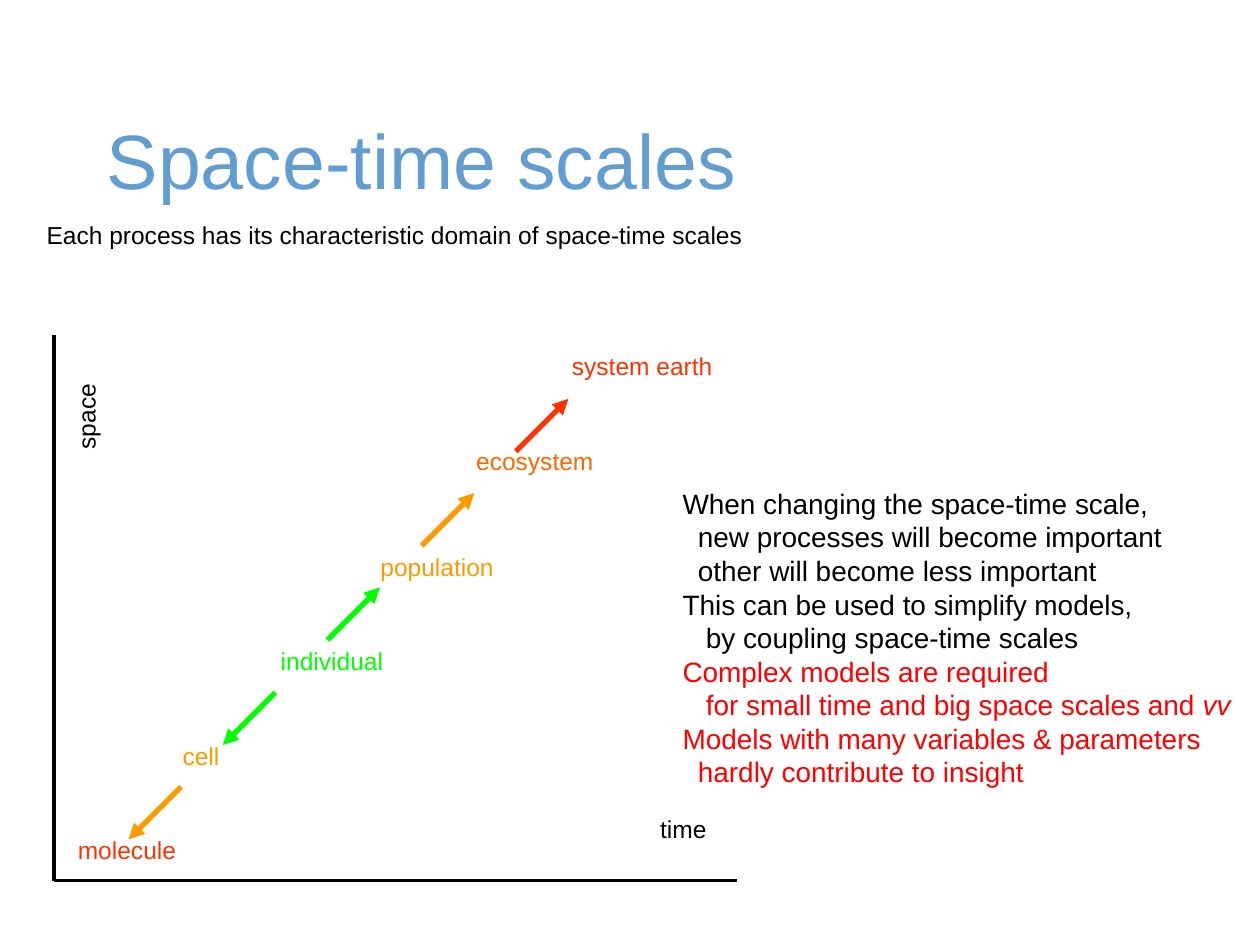
from lxml.etree import SubElement
from pptx import Presentation
from pptx.dml.color import RGBColor
from pptx.enum.shapes import MSO_CONNECTOR as Connector
from pptx.enum.text import MSO_ANCHOR as Anchor, PP_ALIGN as Align
from pptx.oxml.ns import qn
from pptx.util import Cm, Pt

FONT = "Arial"
COLORS = {
    "title": "629DD1",
    "black": "000000",
    "red": "FF0000",
    "vermilion": "FF3300",
    "dark orange": "FF6600",
    "orange": "FF9900",
    "green": "00FF00",
}

# Organisation levels: text, left, top, width (cm), colour
LEVELS = [
    ("molecule", 1.32, 16.71, 3.6, "vermilion"),
    ("cell", 3.43, 14.81, 1.75, "orange"),
    ("individual", 5.41, 12.9, 3.95, "green"),
    ("population", 7.42, 11, 4.1, "orange"),
    ("ecosystem", 9.35, 8.86, 4.05, "dark orange"),
    ("system earth", 11.28, 6.96, 4.75, "vermilion"),
]

# Arrow runs: foot of the first arrow (cm), pointing up, colours going up
ARROW_RUNS = [
    (2.59, 16.92, False, ["orange", "green"]),
    (6.6, 12.9, True, ["green", "orange", "vermilion"]),
]
ARROW_STEP = 1.9
ARROW_SIZE = 1.06

# Notes: indent (cm), colour, runs as (text, italic)
NOTES = [
    (0, "black", [("When changing the space-time scale,", False)]),
    (0.31, "black", [("new processes will become important", False)]),
    (0.31, "black", [("other will become less important", False)]),
    (0, "black", [("This can be used to simplify models,", False)]),
    (0.47, "black", [("by coupling space-time scales", False)]),
    (0, "red", [("Complex models are required", False)]),
    (0.47, "red", [("for small time and big space scales and ", False), ("vv", True)]),
    (0, "red", [("Models with many variables & parameters", False)]),
    (0.31, "red", [("hardly contribute to insight", False)]),
]


def rgb(name):
    return RGBColor.from_string(COLORS[name])


def add_run(paragraph, text, size, color, italic=False):
    run = paragraph.add_run()
    run.text = text
    run.font.name = FONT
    run.font.size = Pt(size)
    run.font.italic = italic
    run.font.color.rgb = rgb(color)


def add_text_box(shapes, left, top, width, height):
    box = shapes.add_textbox(Cm(left), Cm(top), Cm(width), Cm(height))
    box.text_frame.word_wrap = True
    return box


def add_label(shapes, text, left, top, width, color="black"):
    box = add_text_box(shapes, left, top, width, 1.27)
    add_run(box.text_frame.paragraphs[0], text, 14, color)
    return box


def add_line(shapes, start, end, color, width, arrow=False):
    points = [Cm(value) for value in (*start, *end)]
    line = shapes.add_connector(Connector.STRAIGHT, *points)
    line.line.color.rgb = rgb(color)
    line.line.width = Pt(width)
    properties = line._element.spPr
    if arrow:
        SubElement(properties.find(qn("a:ln")), qn("a:tailEnd"), type="triangle")
    SubElement(properties, qn("a:effectLst"))


def add_title(slide, text):
    title = slide.shapes.title
    title.left, title.top = Cm(1.9), Cm(1.73)
    title.width, title.height = Cm(21.59), Cm(3.18)
    title.text_frame.vertical_anchor = Anchor.MIDDLE
    paragraph = title.text_frame.paragraphs[0]
    paragraph.alignment = Align.LEFT
    paragraph.line_spacing = 0.9
    add_run(paragraph, text, 44, "title")


def add_diagram(slide):
    shapes = slide.shapes.add_group_shape().shapes

    # Axes
    origin = (1.09, 17.75)
    add_line(shapes, (1.09, 6.76), origin, "black", 2.25)
    add_line(shapes, origin, (14.86, 17.75), "black", 2.25)
    add_label(shapes, "time", 13.06, 16.28, 2.1)
    add_label(shapes, "space", 0.56, 7.29, 2.77).rotation = 270

    # Levels
    for level in LEVELS:
        add_label(shapes, *level)

    # Arrows between levels
    for left, bottom, upward, colors in ARROW_RUNS:
        for index, color in enumerate(colors):
            x, y = left + index * ARROW_STEP, bottom - index * ARROW_STEP
            ends = [(x, y), (x + ARROW_SIZE, y - ARROW_SIZE)]
            start, end = ends if upward else reversed(ends)
            add_line(shapes, start, end, color, 3, arrow=True)


def add_notes(slide):
    frame = add_text_box(slide.shapes, 13.51, 9.68, 11.8, 6.38).text_frame
    for index, (indent, color, runs) in enumerate(NOTES):
        paragraph = frame.add_paragraph() if index else frame.paragraphs[0]
        paragraph._p.get_or_add_pPr().set("marL", str(Cm(indent)))
        for text, italic in runs:
            add_run(paragraph, text, 16, color, italic)


def main():
    presentation = Presentation()
    presentation.slide_width, presentation.slide_height = Cm(25.4), Cm(19.05)
    slide = presentation.slides.add_slide(presentation.slide_layouts[5])

    add_diagram(slide)
    add_title(slide, "Space-time scales")
    add_notes(slide)
    add_label(
        slide.shapes,
        "Each process has its characteristic domain of space-time scales",
        0.69, 4.32, 24.5,
    )
    presentation.save("out.pptx")


if __name__ == "__main__":
    main()
